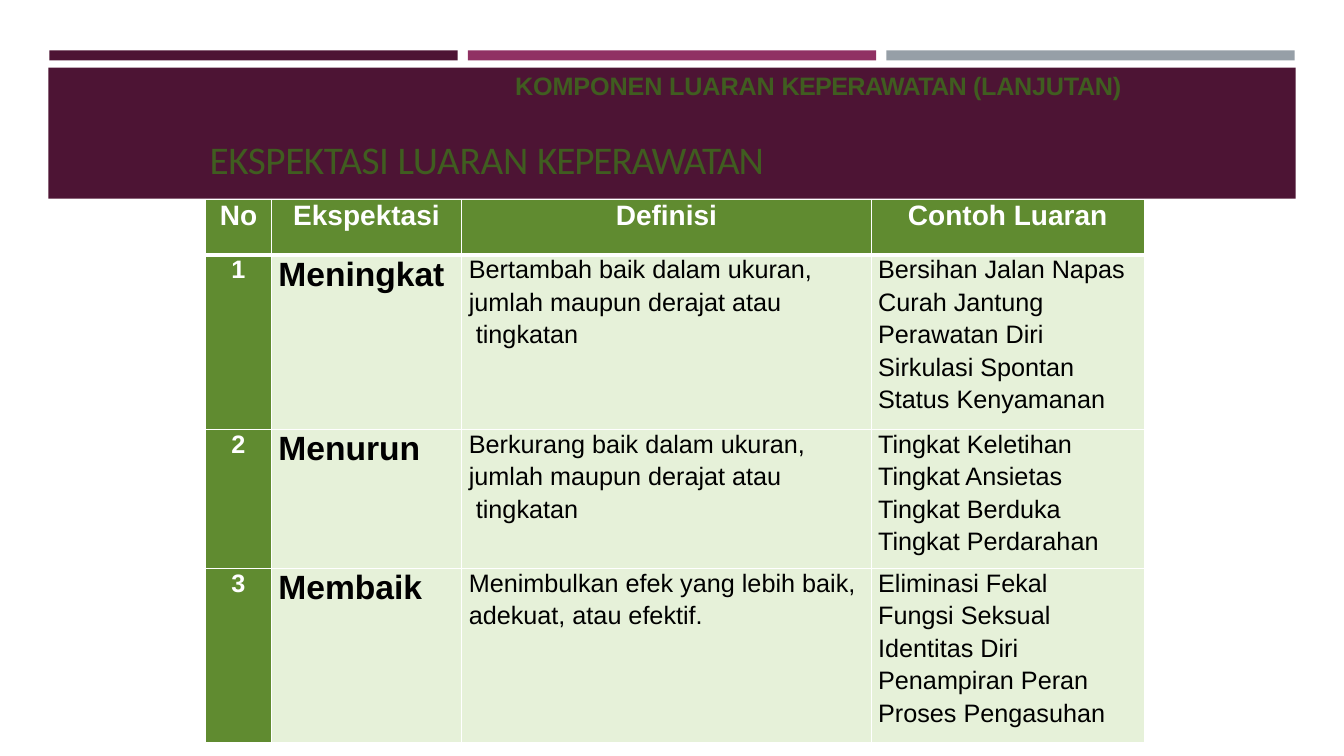
from lxml.etree import SubElement
from pptx import Presentation
from pptx.dml.color import RGBColor
from pptx.enum.shapes import MSO_SHAPE
from pptx.enum.text import MSO_ANCHOR, MSO_AUTO_SIZE, PP_ALIGN
from pptx.oxml.ns import qn
from pptx.util import Inches, Pt

# Content
SUBTITLE = [("KOMPONEN LUARAN ", -0.1), ("KEPERAWATAN ", -0.5), ("(LANJUTAN)", -0.2)]
TITLE = [("EKSPEKTASI ", -0.3), ("LUARAN ", -0.1), ("KEPERAWATAN", -0.8)]
HEADERS = ["No", "Ekspektasi", "Definisi", "Contoh Luaran"]
EXPECTATIONS = [
    ("Meningkat",
     ["Bertambah baik dalam ukuran,", "jumlah maupun derajat atau", "tingkatan"],
     ["Bersihan Jalan Napas", "Curah Jantung", "Perawatan Diri",
      "Sirkulasi Spontan", "Status Kenyamanan"]),
    ("Menurun",
     ["Berkurang baik dalam ukuran,", "jumlah maupun derajat atau", "tingkatan"],
     ["Tingkat Keletihan", "Tingkat Ansietas", "Tingkat Berduka",
      "Tingkat Perdarahan"]),
    ("Membaik",
     ["Menimbulkan efek yang lebih baik,", "adekuat, atau efektif."],
     ["Eliminasi Fekal", "Fungsi Seksual", "Identitas Diri",
      "Penampiran Peran", "Proses Pengasuhan"]),
]

# Style
PLUM, MAGENTA, GRAY = "4D1434", "903163", "969FA7"
GREEN, PALE_GREEN, DARK_GREEN = "608B30", "E6F1D9", "405D20"
WHITE, BLACK = "FFFFFF", "000000"
COLUMN_WIDTHS = [0.65, 1.89, 4.06, 2.71]
ROW_HEIGHTS = [0.55, 1.73, 1.38, 1.73]


def color(value):
    return RGBColor.from_string(value)


def style_run(run, size, value, bold=False, font="Arial", spacing=0):
    run.font.name = font
    run.font.size = Pt(size)
    run.font.bold = bold
    run.font.color.rgb = color(value)
    run.font._element.set("spc", str(round(spacing * 100)))


def add_band(slide, left, top, width, height, fill):
    band = slide.shapes.add_shape(MSO_SHAPE.RECTANGLE, Inches(left), Inches(top),
                                  Inches(width), Inches(height))
    band.shadow.inherit = False
    band.fill.solid()
    band.fill.fore_color.rgb = color(fill)
    band.line.fill.background()


def fill_heading(shape, parts, size, font, bold, anchor):
    frame = shape.text_frame
    frame.word_wrap = True
    frame.auto_size = MSO_AUTO_SIZE.NONE
    frame.vertical_anchor = anchor
    frame.margin_left = Inches(0.01)
    frame.margin_top = Inches(0.01)
    frame.margin_right = frame.margin_bottom = 0
    paragraph = frame.paragraphs[0]
    paragraph.alignment = PP_ALIGN.LEFT
    paragraph.space_before = Pt(1)
    for text, spacing in parts:
        run = paragraph.add_run()
        run.text = text
        style_run(run, size, DARK_GREEN, bold, font, spacing)


def style_cell(cell, fill, top_width, bottom_width):
    cell.margin_left = cell.margin_right = cell.margin_bottom = 0
    cell.margin_top = Inches(0.01)
    properties = cell._tc.get_or_add_tcPr()
    for side, width in zip("LRTB", (1, 1, top_width, bottom_width)):
        line = SubElement(properties, qn(f"a:ln{side}"), w=str(Pt(width)))
        SubElement(SubElement(line, qn("a:solidFill")), qn("a:srgbClr"), val=WHITE)
    cell.fill.solid()
    cell.fill.fore_color.rgb = color(fill)


def fill_cell(cell, lines, size, value, bold, centered):
    cell.text_frame.text = "\n".join(lines)
    for index, paragraph in enumerate(cell.text_frame.paragraphs):
        paragraph.alignment = PP_ALIGN.CENTER if centered else PP_ALIGN.LEFT
        paragraph.space_before = Pt(0.7)
        if index:
            paragraph.line_spacing = 1.15
            paragraph.space_before = Pt(0)
        if not centered:
            indent = 0.14 if paragraph.text == "tingkatan" else 0.07
            paragraph._p.get_or_add_pPr().set("marL", str(Inches(indent)))
        style_run(paragraph.runs[0], size, value, bold)


presentation = Presentation()
presentation.slide_width, presentation.slide_height = Inches(13.33), Inches(7.5)
slide = presentation.slides.add_slide(presentation.slide_layouts[5])

# Top stripes and title band
for index, fill in enumerate([PLUM, MAGENTA, GRAY]):
    add_band(slide, 0.49 + index * 4.15, 0.5, 4.05, 0.1, fill)
add_band(slide, 0.48, 0.67, 12.37, 1.3, PLUM)

# Table
table = slide.shapes.add_table(
    len(ROW_HEIGHTS), len(COLUMN_WIDTHS), Inches(2.04), Inches(1.98),
    Inches(sum(COLUMN_WIDTHS)), Inches(sum(ROW_HEIGHTS))).table
for column, width in zip(table.columns, COLUMN_WIDTHS):
    column.width = Inches(width)
for row, height in zip(table.rows, ROW_HEIGHTS):
    row.height = Inches(height)

rows = [[[header] for header in HEADERS]]
for number, (name, definition, examples) in enumerate(EXPECTATIONS, 1):
    rows.append([[str(number)], [name], definition, examples])
for row_index, row in enumerate(rows):
    for column_index, lines in enumerate(row):
        cell = table.cell(row_index, column_index)
        is_header = row_index == 0
        on_green = is_header or column_index == 0
        is_name = column_index == 1
        size = 20 if is_header else 24 if is_name else 18
        style_cell(cell, GREEN if on_green else PALE_GREEN,
                   3 if row_index == 1 else 1, 3 if is_header else 1)
        fill_cell(cell, lines, size, WHITE if on_green else BLACK,
                  on_green or is_name, on_green)

# Headings, with the title raised above the band
subtitle = slide.shapes.add_textbox(Inches(5.1), Inches(0.69), Inches(6.16), Inches(0.33))
fill_heading(subtitle, SUBTITLE, 18, "Arial", True, MSO_ANCHOR.TOP)
title = slide.shapes.title
title.left, title.top = Inches(2.07), Inches(1.32)
title.width, title.height = Inches(7.3), Inches(0.49)
fill_heading(title, TITLE, 28, "Calibri", False, MSO_ANCHOR.BOTTOM)
slide.shapes._spTree.append(title._element)

presentation.save("out.pptx")
